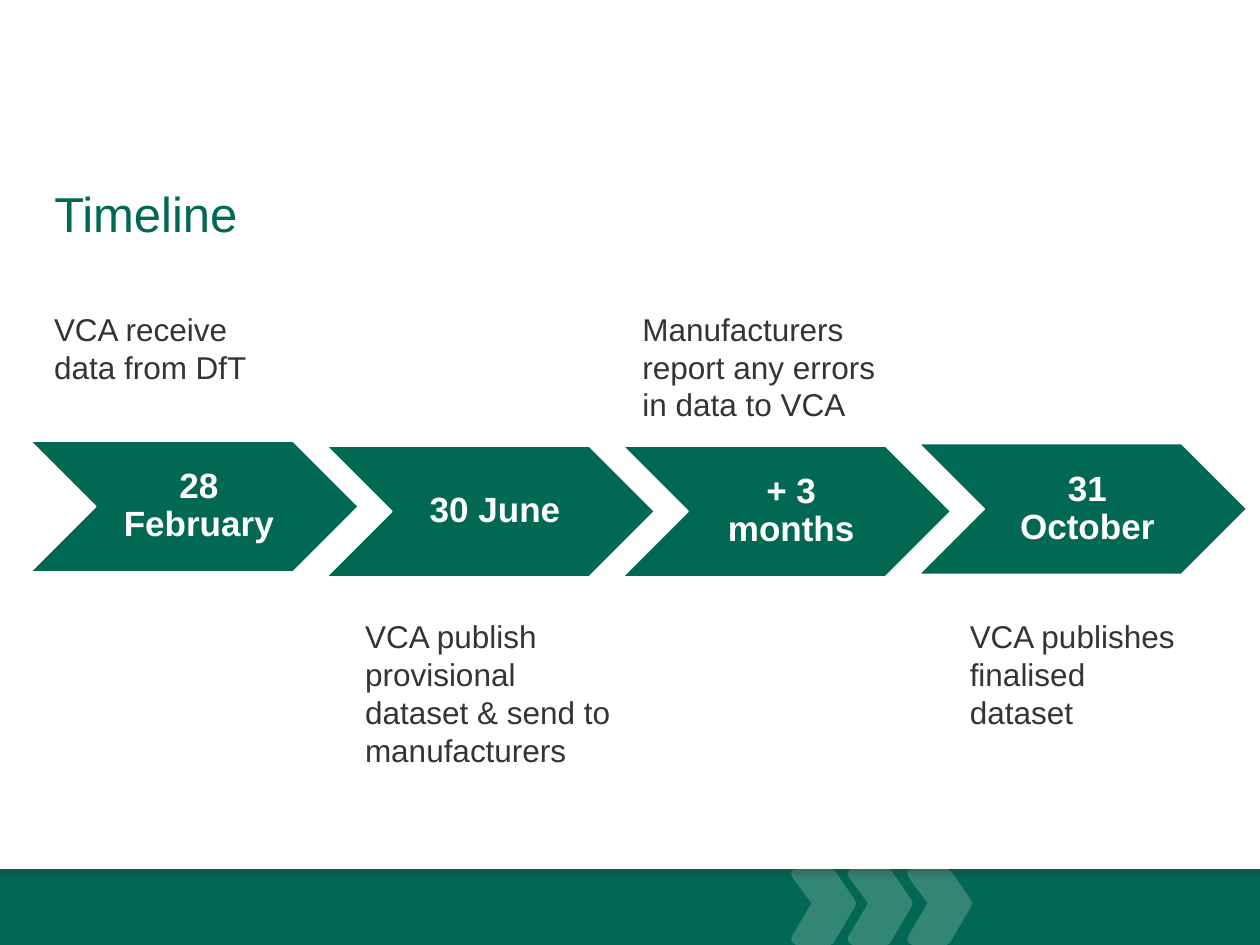
from lxml import etree
from pptx import Presentation
from pptx import util as u
from pptx.dml.color import RGBColor
from pptx.enum import shapes, text
from pptx.oxml.ns import qn

GREEN, PALE_GREEN, GREY, WHITE = "006853", "338675", "323437", "FFFFFF"
BAND_TOP, BAND_HEIGHT = 17.52, 1.53
ARROW_LEFT, ARROW_STEP, ARROW_WIDTH, ARROW_HEIGHT = 0.61, 5.97, 6.62, 2.64
LABEL_INSET, LABEL_WIDTH = 1.33, 3.99
ABOVE, BELOW = 6.12, 12.32

STEPS = [
    ("28 February", 8.89, "VCA receive data from DfT", (0.84, ABOVE, 5.26, 1.8)),
    ("30 June", 8.99, "VCA publish provisional dataset & send to manufacturers",
     (7.11, BELOW, 5.59, 3.33)),
    ("+ 3 months", 8.99, "Manufacturers report any errors in data to VCA",
     (12.7, ABOVE, 5.26, 2.57)),
    ("31 October", 8.94, "VCA publishes finalised dataset", (19.3, BELOW, 4.8, 2.57)),
]
BAND_CHEVRON = [
    (0.1, 0), (0.79, 0), (0.87, 0.03), (0.92, 0.09), (1.29, 0.63), (1.31, 0.7),
    (1.28, 0.77), (0.9, 1.42), (0.85, 1.5), (0.79, 1.53), (0.1, 1.53),
    (0.03, 1.49), (0, 1.43), (0.01, 1.36), (0.41, 0.69), (0.02, 0.16),
    (0, 0.08), (0.03, 0.02),
]


def colour(value):
    return RGBColor.from_string(value)


def paint(shape, fill, line=None):
    shape.shadow.inherit = False
    shape.fill.solid()
    shape.fill.fore_color.rgb = colour(fill)
    if line:
        shape.line.color.rgb = colour(line)
        shape.line.width = u.Pt(1)
    else:
        shape.line.fill.background()


def add_preset(page, kind, place, fill, line=None):
    shape = page.shapes.add_shape(kind, *map(u.Cm, place))
    paint(shape, fill, line)
    return shape


def write(frame, words, size, ink, bold=False):
    frame.word_wrap = True
    para = frame.paragraphs[0]
    span = para.add_run()
    span.text = words
    span.font.name = "Arial"
    span.font.size = u.Pt(size)
    span.font.bold = bold
    span.font.color.rgb = colour(ink)
    return para


def add_text(page, place, words, size, ink, bold=False):
    box = page.shapes.add_textbox(*map(u.Cm, place))
    return box.text_frame, write(box.text_frame, words, size, ink, bold)


def add_label(page, place, words):
    frame, para = add_text(page, place, words, 20, WHITE, True)
    frame.vertical_anchor = text.MSO_ANCHOR.MIDDLE
    frame.margin_left = u.Cm(0.23)
    frame.margin_top = frame.margin_right = frame.margin_bottom = u.Cm(0.08)
    para.alignment = text.PP_ALIGN.CENTER
    para.line_spacing = 0.9


def add_band_chevrons(page):
    builder = None
    for left in (15.95, 17.09, 18.29):
        points = [(u.Cm(left + x), u.Cm(BAND_TOP + y)) for x, y in BAND_CHEVRON]
        if builder is None:
            builder = page.shapes.build_freeform(*points[0])
        else:
            builder.move_to(*points[0])
        builder.add_line_segments(points[1:], close=True)
    paint(builder.convert_to_shape(), PALE_GREEN)


def add_band_shade(page):
    shade = add_preset(page, shapes.MSO_SHAPE.RECTANGLE, (0, BAND_TOP, 25.4, 0.2), GREY)
    shade.fill.gradient()
    shade.fill.gradient_angle = 270
    for stop, position, opacity in zip(shade.fill.gradient_stops, (0, 1), (30000, 0)):
        stop.position = position
        stop.color.rgb = colour(GREY)
        tint = shade.fill.gradient_stops[position].color
        tint.rgb = colour(GREY)
        tone = list(shade.element.spPr.iter(qn("a:srgbClr")))[position]
        etree.SubElement(tone, qn("a:alpha")).set("val", str(opacity))


def add_title(page, words):
    title = page.shapes.title
    title.left, title.top, title.width, title.height = map(u.Cm, (0.84, 3.71, 24, 1.96))
    para = write(title.text_frame, words, 28, GREEN)
    title.text_frame.vertical_anchor = text.MSO_ANCHOR.TOP
    para.alignment = text.PP_ALIGN.LEFT
    para.line_spacing = 0.9


def add_step(page, index, date, top, note, note_place):
    left = ARROW_LEFT + index * ARROW_STEP
    add_preset(page, shapes.MSO_SHAPE.CHEVRON,
               (left, top, ARROW_WIDTH, ARROW_HEIGHT), GREEN, WHITE)
    add_label(page, (left + LABEL_INSET, top, LABEL_WIDTH, ARROW_HEIGHT), date)
    add_text(page, note_place, note, 18, GREY)


def main():
    deck = Presentation()
    deck.slide_width, deck.slide_height = u.Cm(25.4), u.Cm(19.05)
    page = deck.slides.add_slide(deck.slide_layouts[5])
    add_preset(page, shapes.MSO_SHAPE.RECTANGLE, (0, BAND_TOP, 25.4, BAND_HEIGHT), GREEN)
    add_band_chevrons(page)
    add_band_shade(page)
    add_title(page, "Timeline")
    for index, step in enumerate(STEPS):
        add_step(page, index, *step)
    deck.save("out.pptx")


if __name__ == "__main__":
    main()
